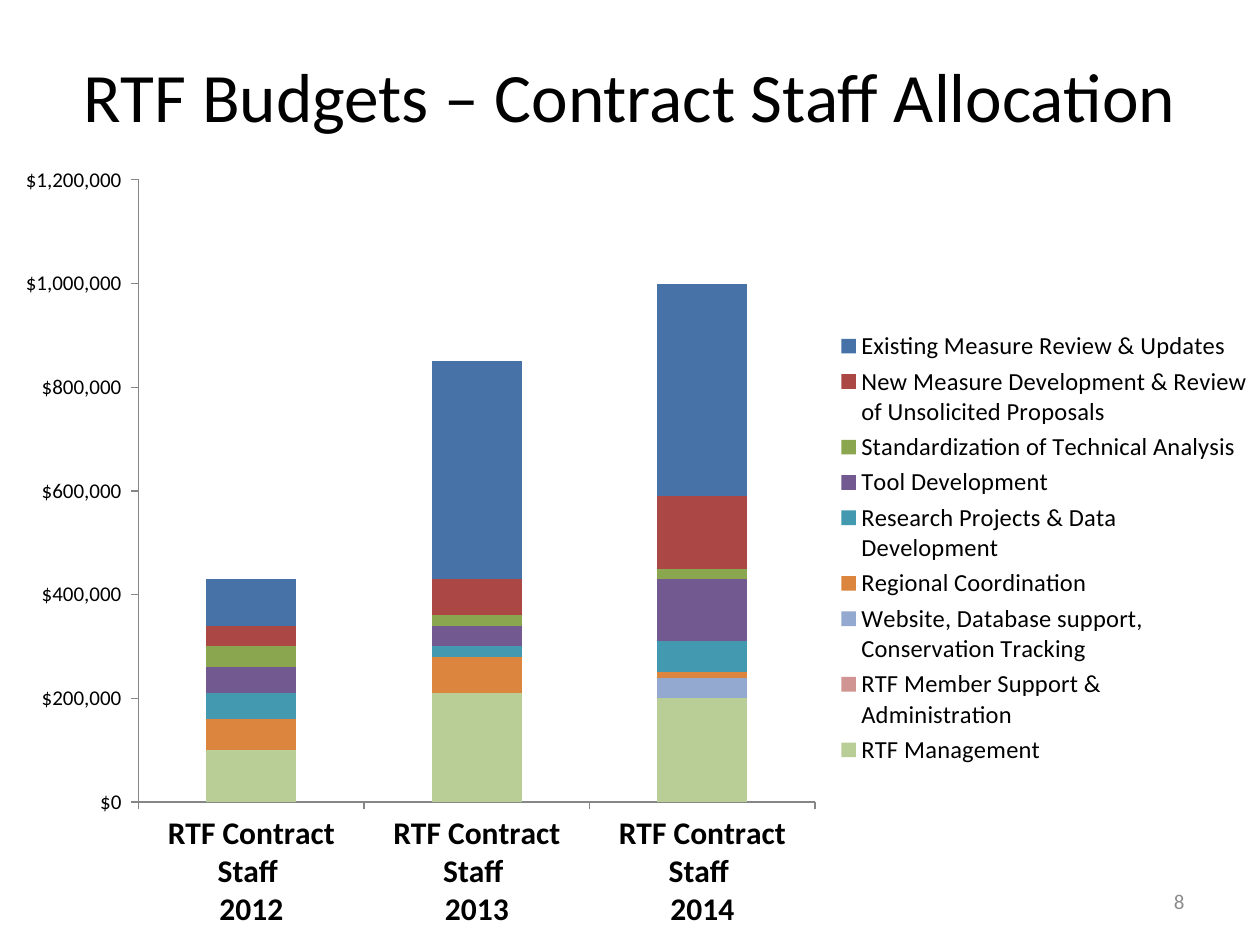
from lxml import etree
from pptx import Presentation
from pptx import util as u
from pptx.chart import data as cd
from pptx.dml import color as col
from pptx.enum import chart as ch, text as tx
from pptx.oxml import ns

YEARS = (2012, 2013, 2014)
STAFF = [
    ("RTF Management", (100000, 210000, 200000), "B9CD96"),
    ("RTF Member Support & Administration", (0, 0, 0), "D09493"),
    ("Website, Database support, Conservation Tracking", (0, 0, 40000), "93A9D0"),
    ("Regional Coordination", (60000, 70000, 10000), "DC853E"),
    ("Research Projects & Data Development", (50000, 20000, 60000), "4299B0"),
    ("Tool Development", (50000, 40000, 120000), "725990"),
    ("Standardization of Technical Analysis", (40000, 20000, 20000), "8AA64F"),
    ("New Measure Development & Review of Unsolicited Proposals",
     (40000, 70000, 140000), "AB4744"),
    ("Existing Measure Review & Updates", (90000, 420000, 410000), "4672A8"),
]


def rgb(code):
    """Return the colour for a hex string."""
    return col.RGBColor.from_string(code)


def style(font, size, code="000000", bold=False):
    """Set the look of a font."""
    font.name, font.size, font.bold = "Calibri", u.Pt(size), bold
    font.color.rgb = rgb(code)


def label(slide, words, box, size, align, code="000000"):
    """Add one line of text in a box given in centimetres."""
    frame = slide.shapes.add_textbox(*map(u.Cm, box)).text_frame
    frame.word_wrap = True
    frame.vertical_anchor = tx.MSO_ANCHOR.MIDDLE
    frame.text = words
    para = frame.paragraphs[0]
    para.alignment = align
    style(para.runs[0].font, size, code)


def place(part, box, after=None, inner=False):
    """Fix a chart part at fractions of the chart area."""
    for old in part.findall(ns.qn("c:layout")):
        part.remove(old)
    layout = etree.Element(ns.qn("c:layout"))
    manual = etree.SubElement(layout, ns.qn("c:manualLayout"))
    pairs = [("layoutTarget", "inner")] if inner else []
    pairs += [("xMode", "edge"), ("yMode", "edge")]
    pairs += zip("xywh", map(str, box))
    for tag, val in pairs:
        etree.SubElement(manual, ns.qn("c:" + tag)).set("val", val)
    spot = 0 if after is None else part.index(part.find(ns.qn(after))) + 1
    part.insert(spot, layout)


def set_axis(axis, size, bold=False):
    """Style an axis with crossing ticks and no grid."""
    axis.has_major_gridlines = False
    axis.major_tick_mark = ch.XL_TICK_MARK.OUTSIDE
    axis.minor_tick_mark = ch.XL_TICK_MARK.NONE
    axis.format.line.color.rgb = rgb("868686")
    axis.format.line.width = u.Pt(0.75)
    style(axis.tick_labels.font, size, bold=bold)


def add_stack(slide, box):
    """Add the stacked budget chart."""
    data = cd.CategoryChartData()
    data.categories = [f"RTF Contract Staff \n{year}" for year in YEARS]
    for name, vals, _ in STAFF:
        data.add_series(name, vals)
    chart = slide.shapes.add_chart(
        ch.XL_CHART_TYPE.COLUMN_STACKED, *map(u.Cm, box), data).chart
    chart.has_title = False
    style(chart.font, 10)
    plot = chart.plots[0]
    plot.vary_by_categories = False
    plot.gap_width, plot.overlap = 150, 100
    for item, (_, _, code) in zip(plot.series, STAFF):
        item.format.fill.solid()
        item.format.fill.fore_color.rgb = rgb(code)
    set_axis(chart.category_axis, 18, True)
    axis = chart.value_axis
    set_axis(axis, 12)
    axis.minimum_scale, axis.maximum_scale, axis.major_unit = 0, 1200000, 200000
    axis.tick_labels.number_format = '"$"#,##0_);\\("$"#,##0\\)'
    axis.tick_labels.number_format_is_linked = False
    chart.has_legend = True
    key = chart.legend
    key.position = ch.XL_LEGEND_POSITION.RIGHT
    key.include_in_layout = False
    style(key.font, 14)
    root = chart.element
    place(root.find(".//" + ns.qn("c:plotArea")), (0.11, 0.036, 0.537, 0.784), inner=True)
    place(root.find(".//" + ns.qn("c:legend")), (0.67, 0.22, 0.33, 0.56), "c:legendPos")


def main():
    """Build and save the slide."""
    deck = Presentation()
    deck.slide_width, deck.slide_height = u.Cm(25.4), u.Cm(19.05)
    slide = deck.slides.add_slide(deck.slide_layouts[6])
    label(slide, "RTF Budgets – Contract Staff Allocation",
          (1.27, 0.76, 22.86, 2.29), 39.6, tx.PP_ALIGN.CENTER)
    add_stack(slide, (0, 3.05, 25.4, 16))
    label(slide, "8", (18.21, 17.65, 5.92, 1.02), 12, tx.PP_ALIGN.RIGHT, "8C8C8C")
    deck.save("out.pptx")


if __name__ == "__main__":
    main()
